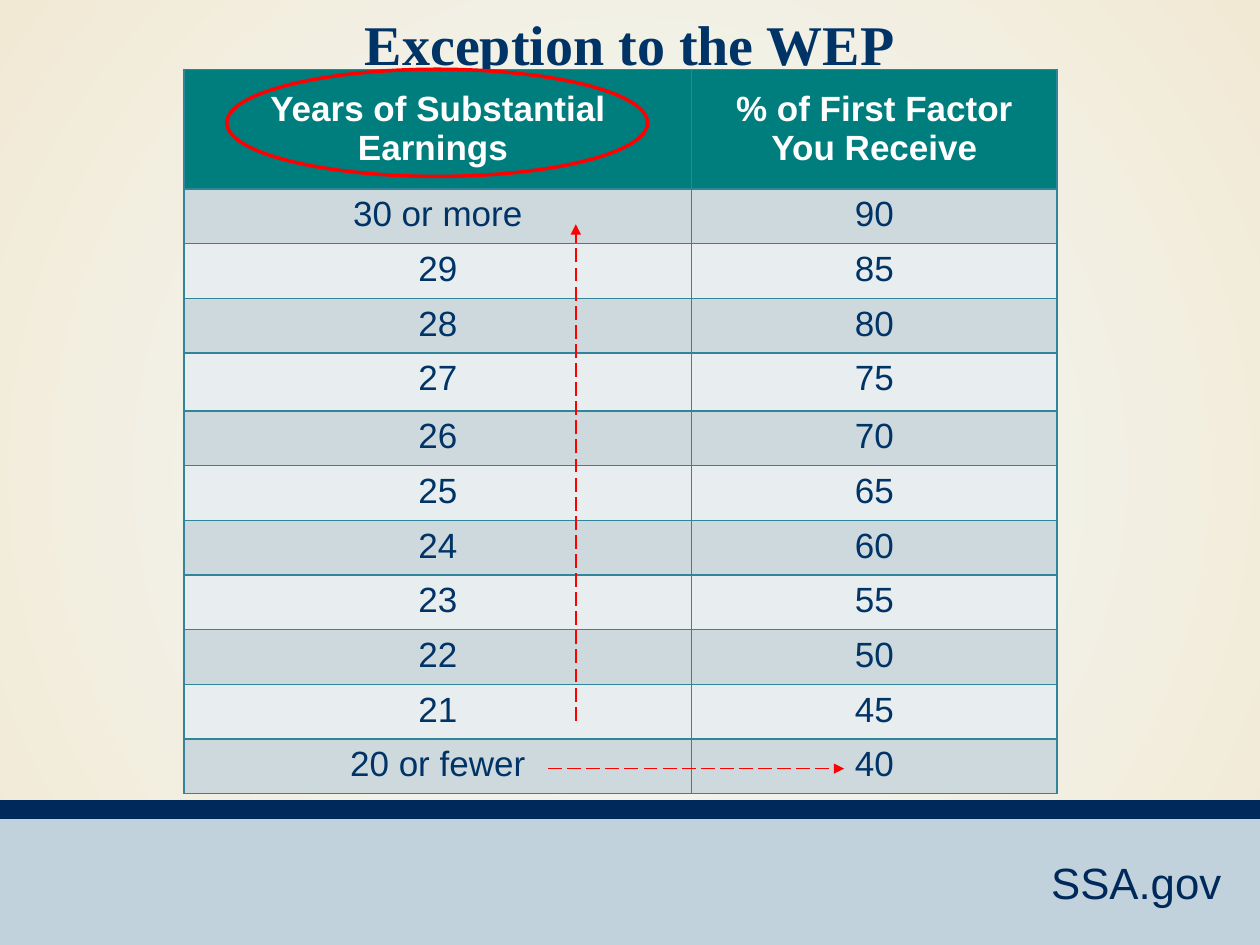
from lxml.etree import SubElement
from pptx import Presentation
from pptx.dml.color import RGBColor
from pptx.enum.dml import MSO_LINE
from pptx.enum.shapes import MSO_CONNECTOR, MSO_SHAPE
from pptx.enum.text import MSO_ANCHOR as Anchor, PP_ALIGN as Align
from pptx.oxml import parse_xml
from pptx.oxml.ns import nsdecls, qn
from pptx.util import Inches, Pt

TITLE = "Exception to the WEP"
FOOTER = "SSA.gov"
HEADER = ("Years of Substantial Earnings ", "% of First Factor You Receive")
YEARS = ["30 or more", *range(29, 20, -1), "20 or fewer"]
PERCENTS = range(90, 39, -5)
ROWS = [HEADER, *zip(YEARS, PERCENTS)]

COLUMN_WIDTHS = (4.03, 2.9)
ROW_HEIGHT = 0.41
SPECIAL_HEIGHTS = {0: 0.95, 4: 0.46}
BANDS = [((0, 6.45, 10, 1.06), "footer"), ((0, 6.35, 10, 0.15), "navy")]
ARROWS = [((4.57, 5.72), (4.57, 1.78)), ((4.35, 6.1), (6.7, 6.1))]

THEME = {
    "colors": {
        "center": "F3FAFB", "edge": "F2E9D5", "footer": "C1D2DC",
        "navy": "00295B", "text": "003366", "header": "007D7D",
        "white": "FFFFFF", "odd": "CED9DE", "even": "E8EDEF",
        "border": "31859B", "mark": "FF0000",
    },
    "fonts": {
        "title": {"name": "Times New Roman", "size": Pt(32), "bold": True},
        "header": {"name": "Arial", "size": Pt(20), "bold": True},
        "body": {"name": "Arial", "size": Pt(20), "bold": False},
        "footer": {"name": "Arial", "size": Pt(25), "bold": False},
    },
}


def color(name):
    return RGBColor.from_string(THEME["colors"][name])


def inches(*values):
    return [Inches(value) for value in values]


def place(shape, *box):
    for side, value in zip(("left", "top", "width", "height"), inches(*box)):
        setattr(shape, side, value)


def write(frame, text, style, ink, align):
    frame.text = str(text)
    para = frame.paragraphs[0]
    para.alignment = align
    span = para.runs[0]
    for key, value in THEME["fonts"][style].items():
        setattr(span.font, key, value)
    span.font.color.rgb = color(ink)


def paint_background(page):
    fill = page.background.fill
    fill.gradient()
    for stop, name, position in zip(fill.gradient_stops, ("center", "edge"), (0, 1)):
        stop.color.rgb = color(name)
        stop.position = position
    gradient = page.element.find(".//" + qn("a:gradFill"))
    gradient.replace(gradient.find(qn("a:lin")), parse_xml(
        f'<a:path {nsdecls("a")} path="circle">'
        '<a:fillToRect l="50000" t="50000" r="50000" b="50000"/></a:path>'))


def add_footer(page):
    for box, name in BANDS:
        band = page.shapes.add_shape(MSO_SHAPE.RECTANGLE, *inches(*box))
        band.shadow.inherit = False
        band.fill.solid()
        band.fill.fore_color.rgb = color(name)
        band.line.fill.background()
    label = page.shapes.add_textbox(*inches(6.72, 6.74, 3.07, 0.52))
    label.text_frame.word_wrap = True
    write(label.text_frame, FOOTER, "footer", "navy", Align.RIGHT)


def add_borders(cell):
    properties = cell._tc.get_or_add_tcPr()
    for index, side in enumerate(("lnL", "lnR", "lnT", "lnB")):
        properties.insert(index, parse_xml(
            f'<a:{side} {nsdecls("a")} w="{Pt(1)}"><a:solidFill>'
            f'<a:srgbClr val="{THEME["colors"]["border"]}"/></a:solidFill></a:{side}>'))


def add_factor_table(page):
    heights = [SPECIAL_HEIGHTS.get(index, ROW_HEIGHT) for index in range(len(ROWS))]
    box = inches(1.46, 0.55, sum(COLUMN_WIDTHS), sum(heights))
    table = page.shapes.add_table(len(ROWS), len(HEADER), *box).table
    for column, width in zip(table.columns, COLUMN_WIDTHS):
        column.width = Inches(width)
    for index, (values, height) in enumerate(zip(ROWS, heights)):
        table.rows[index].height = Inches(height)
        is_header = index == 0
        style, ink = ("header", "white") if is_header else ("body", "text")
        fill = "header" if is_header else ("even", "odd")[index % 2]
        for cell, value in zip(table.rows[index].cells, values):
            write(cell.text_frame, value, style, ink, Align.CENTER)
            cell.vertical_anchor = Anchor.MIDDLE if is_header else Anchor.TOP
            cell.fill.solid()
            cell.fill.fore_color.rgb = color(fill)
            add_borders(cell)


def add_marks(page):
    for start, end in ARROWS:
        arrow = page.shapes.add_connector(
            MSO_CONNECTOR.STRAIGHT, *inches(*start, *end))
        arrow.line.color.rgb = color("mark")
        arrow.line.width = Pt(1)
        arrow.line.dash_style = MSO_LINE.LONG_DASH
        SubElement(arrow.line._get_or_add_ln(), qn("a:tailEnd"), type="triangle")
        SubElement(arrow._element.spPr, qn("a:effectLst"))
    ring = page.shapes.add_shape(MSO_SHAPE.OVAL, *inches(1.8, 0.55, 3.34, 0.85))
    ring.shadow.inherit = False
    ring.fill.background()
    ring.line.color.rgb = color("mark")
    ring.line.width = Pt(2)


def main():
    deck = Presentation()
    deck.slide_width, deck.slide_height = inches(10, 7.5)
    page = deck.slides.add_slide(deck.slide_layouts[5])
    paint_background(page)
    add_footer(page)
    title = page.shapes.title
    place(title, 0.5, -0.05, 9, 0.79)
    title.text_frame.vertical_anchor = Anchor.MIDDLE
    write(title.text_frame, TITLE, "title", "text", Align.CENTER)
    add_factor_table(page)
    add_marks(page)
    deck.save("out.pptx")


if __name__ == "__main__":
    main()
